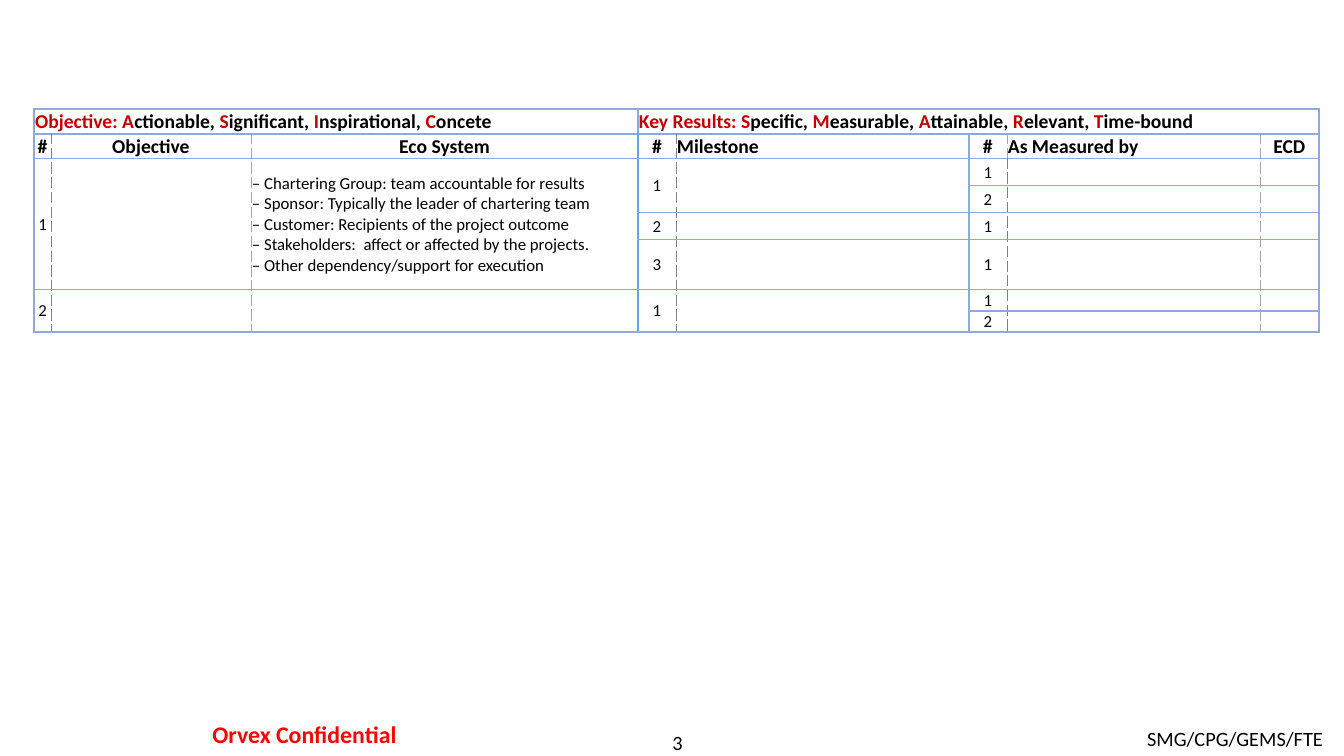
from lxml.etree import SubElement
from pptx import Presentation
from pptx.dml.color import RGBColor
from pptx.enum.text import MSO_ANCHOR, MSO_AUTO_SIZE, PP_ALIGN
from pptx.oxml.ns import qn
from pptx.util import Emu, Pt

SCALE = 12192000 / 1344
FONT = "Calibri"
COLORS = {
    "ink": "000000", "accent": "C00000", "alert": "FF0000",
    "rule": "8EA9DB", "divider": "66A3FF", "gray": "808080", "silver": "A6A6A6",
}
# Border styles: colour, width in points, dash
RULE = ("rule", 1.5, "solid")
DIVIDER = ("divider", 1.5, "solid")
DOTTED = ("gray", 0.5, "sysDash")
DASHED = ("silver", 0.5, "dash")

COLUMNS = [17, 200, 387, 38, 293, 38, 253, 59]
ROWS = [25, 24, 27, 27, 27, 50, 21, 21]
# Vertical lines from the left edge of the table to its right edge
HEADER_EDGES = [RULE, DOTTED, DASHED, DIVIDER, DOTTED, RULE, DASHED, DASHED, RULE]
BODY_EDGES = HEADER_EDGES[:6] + [DOTTED] + HEADER_EDGES[7:]

# Top left cell of each merged area: (rows, columns)
SPANS = {(0, 0): (1, 3), (0, 3): (1, 5)}
SPANS.update({(2, column): (4, 1) for column in range(3)})
SPANS.update({(6, column): (2, 1) for column in range(5)})
SPANS.update({(2, column): (2, 1) for column in (3, 4)})

TITLES = {
    0: ["Objective: A", "ctionable, ", "S", "ignificant, ", "I", "nspirational, ",
        "C", "oncete"],
    3: ["Key Results: S", "pecific, ", "M", "easurable, ", "A", "ttainable, ",
        "R", "elevant, ", "T", "ime-bound"],
}
HEADINGS = ["#", "Objective", "Eco System", "#", "Milestone", "#", "As Measured by", "ECD"]
LEFT_HEADINGS = ("Milestone", "As Measured by")
NUMBERS = {
    0: {2: "1", 6: "2"},
    3: {2: "1", 4: "2", 5: "3", 6: "1"},
    5: {2: "1", 3: "2", 4: "1", 5: "1", 6: "1", 7: "2"},
}
ECO_SYSTEM = [
    "– Chartering Group: team accountable for results",
    "– Sponsor: Typically the leader of chartering team",
    "– Customer: Recipients of the project outcome",
    "– Stakeholders:  affect or affected by the projects.",
    "– Other dependency/support for execution",
]


def px(length):
    return Emu(round(length * SCALE))


class SlideBuilder:
    def __init__(self, page):
        self.page = page

    def add_span(self, para, text, size, color="ink", bold=False):
        span = para.add_run()
        span.text = text
        span.font.name = FONT
        span.font.size = Pt(size)
        span.font.bold = bold
        span.font.color.rgb = RGBColor.from_string(COLORS[color])

    def add_text(self, left, top, width, height, text, size, align,
                 insets=(10, 5), color="ink", bold=False):
        box = self.page.shapes.add_textbox(px(left), px(top), px(width), px(height))
        frame = box.text_frame
        frame.word_wrap = True
        frame.auto_size = MSO_AUTO_SIZE.SHAPE_TO_FIT_TEXT
        frame.margin_left = frame.margin_right = px(insets[0])
        frame.margin_top = frame.margin_bottom = px(insets[1])
        para = frame.paragraphs[0]
        para.alignment = align
        self.add_span(para, text, size, color, bold)

    def add_grid(self, left, top, widths, heights, spans):
        frame = self.page.shapes.add_table(
            len(heights), len(widths), px(left), px(top), px(sum(widths)), px(sum(heights)))
        table = frame.table
        table.first_row = table.horz_banding = False
        for column, width in zip(table.columns, widths):
            column.width = px(width)
        for row, height in zip(table.rows, heights):
            row.height = px(height)
        for (row, column), (down, across) in spans.items():
            table.cell(row, column).merge(table.cell(row + down - 1, column + across - 1))
        return table

    def style_cell(self, cell, left, right):
        """Set insets, borders and an empty fill; keep empty cells at body size."""
        cell.margin_left = cell.margin_right = cell.margin_top = px(1)
        cell.margin_bottom = 0
        cell.vertical_anchor = MSO_ANCHOR.MIDDLE
        if not cell.is_spanned:
            for tag, border in (("lnL", left), ("lnR", right), ("lnT", RULE), ("lnB", RULE)):
                self.add_border(cell, tag, *border)
        cell.fill.background()
        para = cell.text_frame.paragraphs[0]
        if not para.runs:
            SubElement(para._p, qn("a:endParaRPr"), sz="1200")
        return para

    def add_border(self, cell, tag, color, width, dash):
        line = SubElement(cell._tc.get_or_add_tcPr(), qn("a:" + tag), w=str(Pt(width)))
        fill = SubElement(line, qn("a:solidFill"))
        SubElement(fill, qn("a:srgbClr"), val=COLORS[color])
        SubElement(line, qn("a:prstDash"), val=dash)

    def fill_cell(self, para, row, column):
        """Write the title, heading, number or list that belongs in a cell."""
        if row == 0:
            for index, text in enumerate(TITLES.get(column, [])):
                self.add_span(para, text, 14, "ink" if index % 2 else "accent", True)
        elif row == 1:
            heading = HEADINGS[column]
            para.alignment = PP_ALIGN.LEFT if heading in LEFT_HEADINGS else PP_ALIGN.CENTER
            self.add_span(para, heading, 14, bold=True)
        elif (row, column) == (2, 2):
            for index, text in enumerate(ECO_SYSTEM):
                if index:
                    para.add_line_break()
                self.add_span(para, text, 12)
        elif row in NUMBERS.get(column, {}):
            para.alignment = PP_ALIGN.CENTER
            self.add_span(para, NUMBERS[column][row], 12)

    def add_objectives(self, left, top):
        table = self.add_grid(left, top, COLUMNS, ROWS, SPANS)
        for row in range(len(ROWS)):
            edges = HEADER_EDGES if row == 1 else BODY_EDGES
            for column in range(len(COLUMNS)):
                cell = table.cell(row, column)
                self.fill_cell(cell.text_frame.paragraphs[0], row, column)
                borders = (RULE, RULE) if row == 0 else edges[column:column + 2]
                self.style_cell(cell, *borders)


def main():
    deck = Presentation()
    deck.slide_width, deck.slide_height = px(1344), px(756)
    builder = SlideBuilder(deck.slides.add_slide(deck.slide_layouts[6]))
    builder.add_text(560, 730, 235, 24, "3", 14.5, PP_ALIGN.CENTER, insets=(0, 0))
    builder.add_text(890, 721, 443, 35, "SMG/CPG/GEMS/FTE", 14.5, PP_ALIGN.RIGHT)
    builder.add_text(156, 714, 297, 41, "Orvex Confidential", 17, PP_ALIGN.CENTER,
                     insets=(12, 6), color="alert", bold=True)
    builder.add_objectives(34, 109)
    deck.save("out.pptx")


if __name__ == "__main__":
    main()
